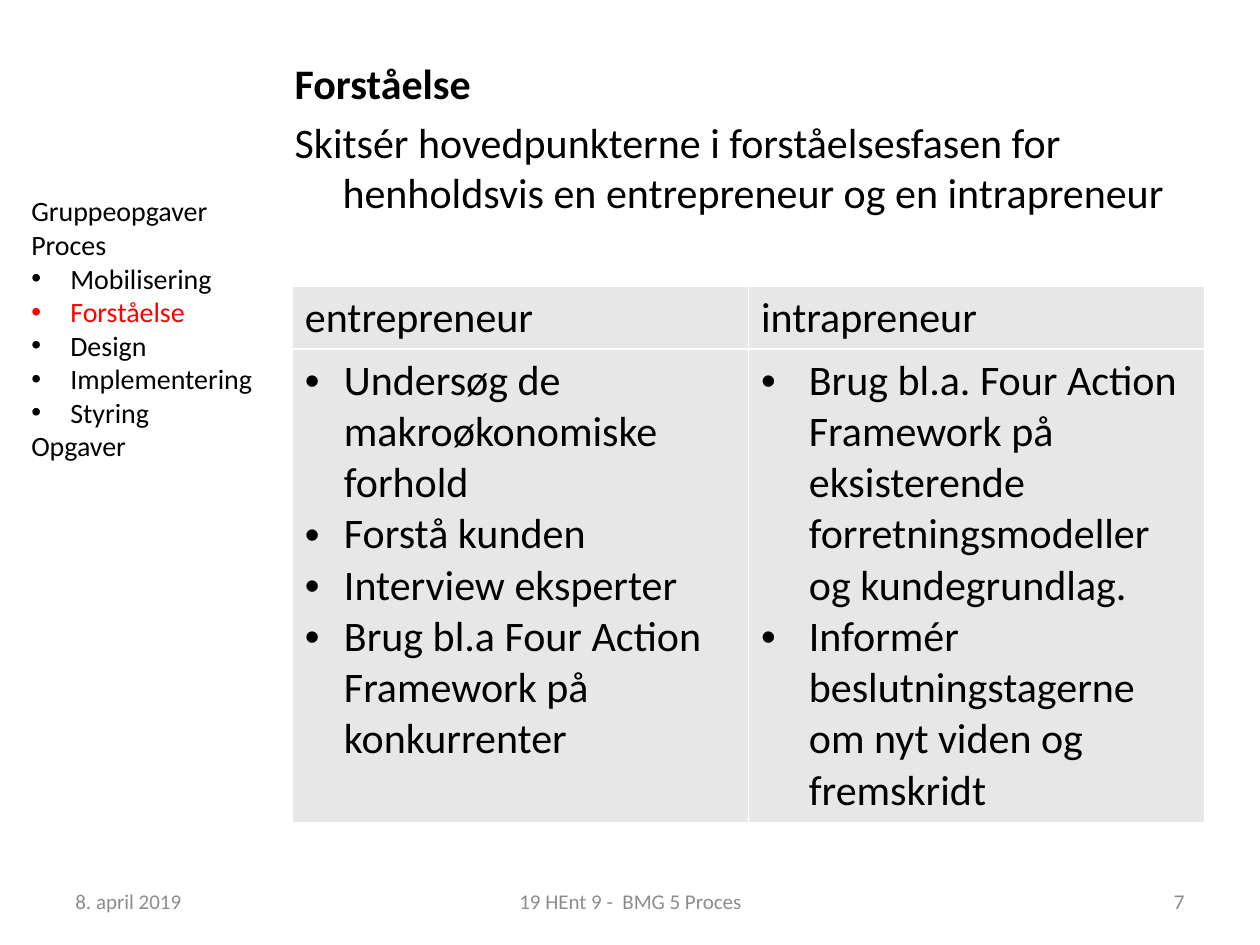
from lxml import etree
from pptx import Presentation
from pptx.dml.color import RGBColor
from pptx.enum.text import MSO_ANCHOR, PP_ALIGN
from pptx.oxml.ns import qn
from pptx.util import Inches, Pt

BLACK = RGBColor(0x00, 0x00, 0x00)
RED = RGBColor(0xFF, 0x00, 0x00)
FOOTER_GREY = RGBColor(0x8C, 0x8C, 0x8C)
CELL_GREY = RGBColor(0xE7, 0xE7, 0xE7)


def write_paragraph(frame, text, size, color=BLACK, bold=False, indent=0, bullet=False):
    """Fill the empty first paragraph or append one; indent is a hanging indent in inches."""
    paragraph = frame.paragraphs[0]
    if paragraph.runs:
        paragraph = frame.add_paragraph()
    run = paragraph.add_run()
    run.text = text
    run.font.name = "Calibri"
    run.font.size = Pt(size)
    run.font.bold = bold
    run.font.color.rgb = color
    if indent:
        properties = paragraph._p.get_or_add_pPr()
        properties.set("marL", str(Inches(indent)))
        properties.set("indent", str(-Inches(indent)))
        if bullet:
            etree.SubElement(properties, qn("a:buFont"), typeface="Arial")
            etree.SubElement(properties, qn("a:buChar"), char="•")
    return paragraph


def add_text_frame(left, top, width, height):
    box = slide.shapes.add_textbox(Inches(left), Inches(top), Inches(width), Inches(height))
    box.text_frame.word_wrap = True
    return box.text_frame


prs = Presentation()
prs.slide_width = Inches(10)
prs.slide_height = Inches(7.5)
slide = prs.slides.add_slide(prs.slide_layouts[6])

# Heading and assignment
assignment = add_text_frame(2.24, 0.41, 7.48, 1.6)
write_paragraph(assignment, "Forståelse", 24, bold=True, indent=0.38)
task = write_paragraph(
    assignment,
    "Skitsér hovedpunkterne i forståelsesfasen for henholdsvis en entrepreneur og en intrapreneur",
    24, indent=0.38)
task.space_before = Pt(4.8)

# Comparison table: heading, bullet indent, points
columns = [
    ("entrepreneur", 0.31, [
        "Undersøg de makroøkonomiske forhold",
        "Forstå kunden",
        "Interview eksperter",
        "Brug bl.a Four Action Framework på konkurrenter",
    ]),
    ("intrapreneur", 0.38, [
        "Brug bl.a. Four Action Framework på eksisterende forretningsmodeller og kundegrundlag.",
        "Informér beslutningstagerne om nyt viden og fremskridt",
    ]),
]
comparison = slide.shapes.add_table(
    2, 2, Inches(2.32), Inches(2.27), Inches(7.24), Inches(4.26)).table
comparison.rows[0].height = Inches(0.5)
comparison.rows[1].height = Inches(3.76)
for index, (heading, indent, points) in enumerate(columns):
    comparison.columns[index].width = Inches(3.62)
    write_paragraph(comparison.cell(0, index).text_frame, heading, 24)
    for point in points:
        write_paragraph(comparison.cell(1, index).text_frame, point, 24,
                        indent=indent, bullet=True)

for cell in comparison.iter_cells():
    cell_properties = cell._tc.get_or_add_tcPr()
    for side in ("a:lnL", "a:lnR", "a:lnT", "a:lnB"):
        border = etree.SubElement(cell_properties, qn(side), w=str(Pt(1)))
        border_fill = etree.SubElement(border, qn("a:solidFill"))
        etree.SubElement(border_fill, qn("a:srgbClr"), val="FFFFFF")
    cell.fill.solid()
    cell.fill.fore_color.rgb = CELL_GREY

# Agenda with the current phase in red
agenda = add_text_frame(0.15, 1.49, 2.19, 2.56)
current_phase = "Forståelse"
for topic in ("Gruppeopgaver", "Proces"):
    write_paragraph(agenda, topic, 16)
for phase in ("Mobilisering", "Forståelse", "Design", "Implementering", "Styring"):
    write_paragraph(agenda, phase, 16, RED if phase == current_phase else BLACK,
                    indent=0.31, bullet=True)
write_paragraph(agenda, "Opgaver", 16)

# Footer
for left, width, text, alignment in (
    (0.5, 2.33, "8. april 2019", PP_ALIGN.LEFT),
    (3.42, 3.17, "19 HEnt 9 -  BMG 5 Proces", PP_ALIGN.CENTER),
    (7.17, 2.33, "7", PP_ALIGN.RIGHT),
):
    footer = add_text_frame(left, 6.95, width, 0.4)
    footer.vertical_anchor = MSO_ANCHOR.MIDDLE
    write_paragraph(footer, text, 12, FOOTER_GREY).alignment = alignment

prs.save("out.pptx")
